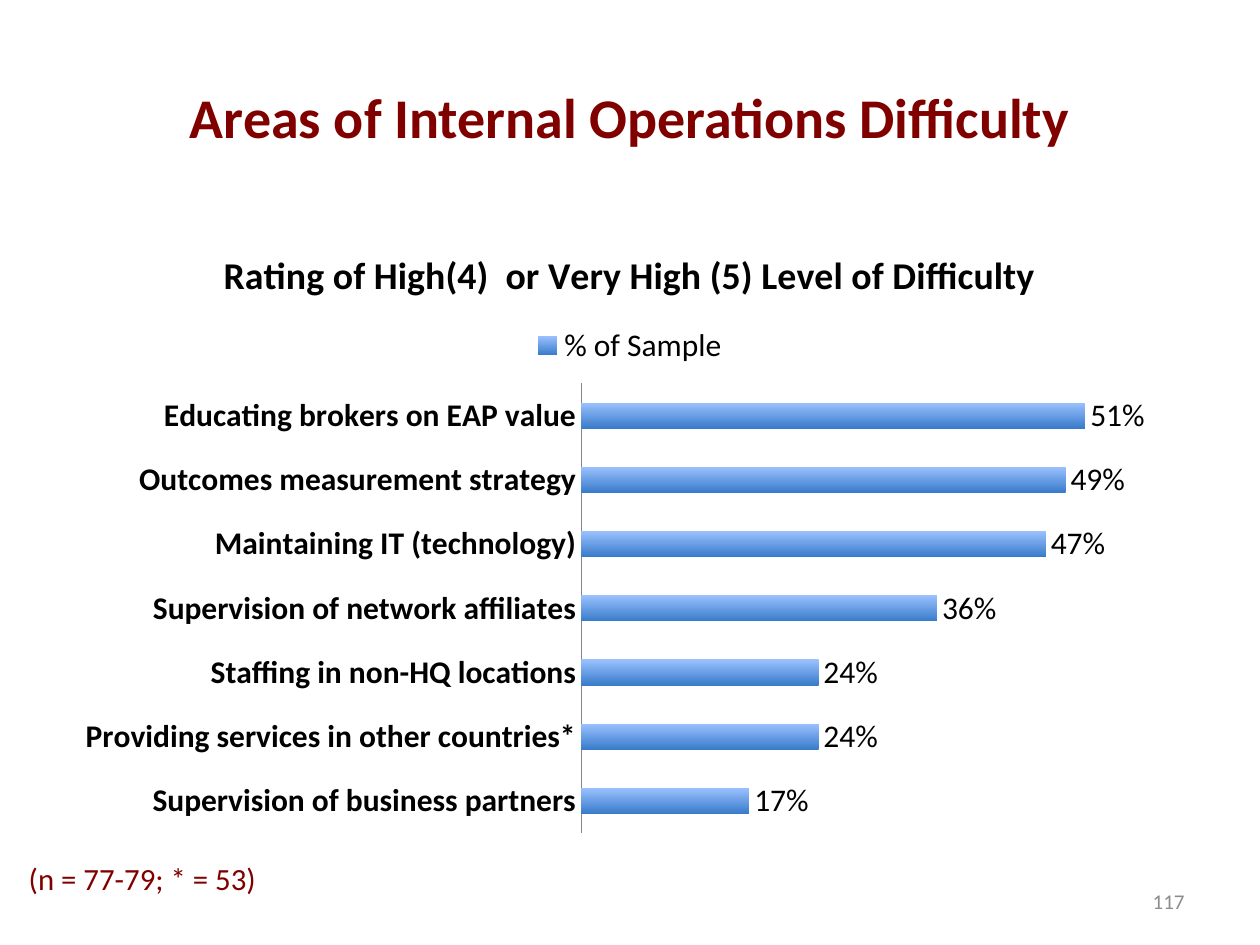
from pptx import Presentation
from pptx.chart.data import CategoryChartData
from pptx.dml.color import RGBColor
from pptx.enum.chart import (XL_CHART_TYPE, XL_LABEL_POSITION as LabelPos,
                             XL_LEGEND_POSITION as LegendPos, XL_TICK_MARK as Tick)
from pptx.enum.text import MSO_ANCHOR as Anchor, PP_ALIGN as Align
from pptx.util import Inches, Pt

FONT = "Calibri"
MAROON, BLACK, GREY = "800000", "000000", "8C8C8C"
RATINGS = [
    ("Supervision of business partners", 0.17),
    ("Providing services in other countries*", 0.24),
    ("Staffing in non-HQ locations", 0.24),
    ("Supervision of network affiliates", 0.36),
    ("Maintaining IT (technology)", 0.47),
    ("Outcomes measurement strategy", 0.49),
    ("Educating brokers on EAP value", 0.51),
]


def rgb(color):
    return RGBColor.from_string(color)


def style_font(font, size, color=BLACK, bold=False):
    font.name, font.size, font.bold = FONT, Pt(size), bold
    font.color.rgb = rgb(color)


def write_text(sp, text, size, color, align, bold=False):
    tf = sp.text_frame
    tf.word_wrap = True
    tf.vertical_anchor = Anchor.MIDDLE
    p = tf.paragraphs[0]
    p.alignment = align
    r = p.add_run()
    r.text = text
    style_font(r.font, size, color, bold)


def add_title(s, box, text):
    sp = s.shapes.title
    sp.left, sp.top, sp.width, sp.height = box
    write_text(sp, text, 32, MAROON, Align.CENTER, bold=True)


def add_note(s, box, text, size, color, align):
    write_text(s.shapes.add_textbox(*box), text, size, color, align)


def add_ratings_chart(s, box):
    data = CategoryChartData(number_format="0%")
    data.categories = [name for name, _ in RATINGS]
    data.add_series("% of Sample", [value for _, value in RATINGS])
    chart = s.shapes.add_chart(XL_CHART_TYPE.BAR_CLUSTERED, *box, data).chart
    style_font(chart.font, 18)

    # Title and legend
    chart.has_title = True
    r = chart.chart_title.text_frame.paragraphs[0].add_run()
    r.text = "Rating of High(4)  or Very High (5) Level of Difficulty"
    style_font(r.font, 21.6, bold=True)
    chart.has_legend = True
    chart.legend.position = LegendPos.TOP
    chart.legend.include_in_layout = False

    # Axes
    cat_axis, val_axis = chart.category_axis, chart.value_axis
    cat_axis.major_tick_mark = Tick.NONE
    cat_axis.format.line.color.rgb = rgb("868686")
    style_font(cat_axis.tick_labels.font, 18, bold=True)
    val_axis.minimum_scale, val_axis.maximum_scale = 0, 0.6
    val_axis.major_unit = 0.6
    val_axis.has_major_gridlines = False
    val_axis.visible = False

    # Bars with a vertical gradient
    plot = chart.plots[0]
    plot.gap_width, plot.overlap = 150, -25
    plot.vary_by_categories = False
    fill = plot.series[0].format.fill
    fill.gradient()
    fill.gradient_angle = 270
    for stop, color in zip(fill.gradient_stops, ("9BC1FF", "3A7CCB")):
        stop.color.rgb = rgb(color)

    # Value labels
    plot.has_data_labels = True
    labels = plot.data_labels
    labels.show_value = True
    labels.number_format, labels.number_format_is_linked = "0%", False
    labels.position = LabelPos.OUTSIDE_END
    style_font(labels.font, 18)


def inches(*lengths):
    return [Inches(length) for length in lengths]


def main():
    prs = Presentation()
    prs.slide_width, prs.slide_height = inches(10, 7.5)
    s = prs.slides.add_slide(prs.slide_layouts[5])
    add_title(s, inches(0.5, 0.3, 9, 1.25), "Areas of Internal Operations Difficulty")
    add_note(s, inches(7.17, 6.95, 2.33, 0.4), "117", 12, GREY, Align.RIGHT)
    add_ratings_chart(s, inches(0.5, 1.76, 9, 4.95))
    add_note(s, inches(0.13, 6.67, 4.87, 0.6), "(n = 77-79; * = 53)", 17.6, MAROON, Align.LEFT)
    prs.save("out.pptx")


if __name__ == "__main__":
    main()
